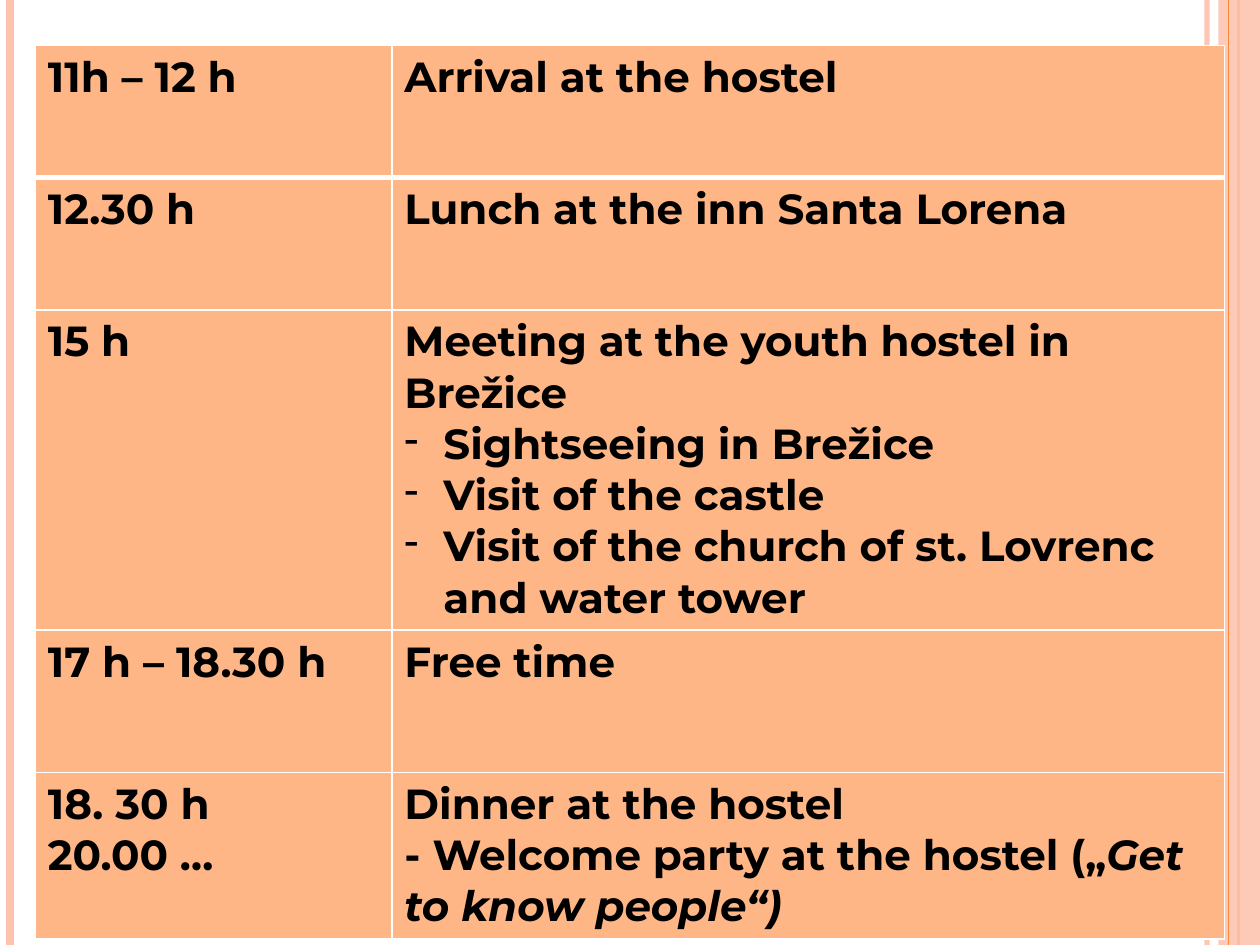
from lxml import etree
from pptx import Presentation
from pptx.dml.color import RGBColor
from pptx.enum.shapes import MSO_CONNECTOR, MSO_SHAPE
from pptx.oxml.ns import qn
from pptx.util import Inches, Pt

STRAIGHT = MSO_CONNECTOR.STRAIGHT
RECTANGLE = MSO_SHAPE.RECTANGLE

PINK = RGBColor(0xFE, 0xC3, 0xAE)
ORANGE = RGBColor(0xFE, 0x86, 0x37)
CELL_FILL = RGBColor(0xFE, 0xB6, 0x87)
BLACK = RGBColor(0, 0, 0)
WHITE = RGBColor(0xFF, 0xFF, 0xFF)

FONT = "Montserrat"
FONT_SIZE = 24
WIDTH, HEIGHT = 10, 7.5

# Each cell is a list of paragraphs: (bulleted, [(text, italic), ...])
def plain(text):
    return False, [(text, False)]


def bullet(text):
    return True, [(text, False)]


SCHEDULE = [
    ([plain("11h – 12 h")], [plain("Arrival at the hostel")]),
    ([plain("12.30 h")], [plain("Lunch at the inn Santa Lorena")]),
    ([plain("15 h")], [
        plain("Meeting at the youth hostel in Brežice"),
        bullet("Sightseeing in Brežice"),
        bullet("Visit of the castle"),
        bullet("Visit of the church of st. Lovrenc and water tower"),
    ]),
    ([plain("17 h – 18.30 h")], [plain("Free time")]),
    ([plain("18. 30 h"), plain("20.00 …")], [
        plain("Dinner at the hostel"),
        (False, [("- Welcome party at the hostel („", False),
                 ("Get to know people“)", True)]),
    ]),
]
TABLE_LEFT, TABLE_TOP = 0.28, 0.36
COLUMN_WIDTHS = [2.83, 6.61]
ROW_HEIGHTS = [1.05, 1.05, 2.1, 1.13, 1.13]
BULLET_INDENT = 0.31

# x position, colour, width in points, opacity in percent
LINES_BELOW_BAND = [
    (9.58, PINK, 3, 93),
    (0.08, PINK, 4.5, 100),
    (9.83, ORANGE, 1.5, 100),
]
LINES_ABOVE_BAND = [(9.75, ORANGE, 0.75, 100)]
BAND_LEFT, BAND_OPACITY = 9.67, 87


def set_opacity(element, percent):
    color = next(element.iter(qn("a:srgbClr")))
    etree.SubElement(color, qn("a:alpha"), val=str(percent * 1000))


def add_vertical_lines(slide, lines):
    for x, color, width, opacity in lines:
        line = slide.shapes.add_connector(
            STRAIGHT, Inches(x), 0, Inches(x), Inches(HEIGHT))
        line.line.color.rgb = color
        line.line.width = Pt(width)
        properties = line._element.spPr
        if opacity < 100:
            set_opacity(properties, opacity)
        etree.SubElement(properties, qn("a:effectLst"))


def add_band(slide):
    band = slide.shapes.add_shape(
        RECTANGLE, Inches(BAND_LEFT), 0,
        Inches(WIDTH - BAND_LEFT), Inches(HEIGHT))
    band.shadow.inherit = False
    band.fill.solid()
    band.fill.fore_color.rgb = PINK
    set_opacity(band._element.spPr, BAND_OPACITY)
    band.line.fill.background()


def set_borders(cell, widths):
    """Draw white borders; widths maps L, R, T and B to points."""
    properties = cell._tc.get_or_add_tcPr()
    for index, side in enumerate("LRTB"):
        border = etree.Element(qn(f"a:ln{side}"), w=str(Pt(widths[side])))
        fill = etree.SubElement(border, qn("a:solidFill"))
        etree.SubElement(fill, qn("a:srgbClr"), val=str(WHITE))
        properties.insert(index, border)


def set_bullet(paragraph):
    properties = paragraph._p.get_or_add_pPr()
    properties.set("marL", str(Inches(BULLET_INDENT)))
    properties.set("indent", str(-Inches(BULLET_INDENT)))
    etree.SubElement(properties, qn("a:buFontTx"))
    etree.SubElement(properties, qn("a:buChar"), char="-")


def fill_cell(cell, paragraphs):
    cell.fill.solid()
    cell.fill.fore_color.rgb = CELL_FILL
    text_frame = cell.text_frame
    text_frame.text = "\n".join(
        "".join(text for text, _ in runs) for _, runs in paragraphs)
    for paragraph, (bulleted, runs) in zip(text_frame.paragraphs, paragraphs):
        if bulleted:
            set_bullet(paragraph)
        paragraph.runs[0].text = runs[0][0]
        for _ in runs[1:]:
            paragraph.add_run()
        for run, (text, italic) in zip(paragraph.runs, runs):
            run.text = text
            run.font.name = FONT
            run.font.size = Pt(FONT_SIZE)
            run.font.bold = True
            run.font.italic = italic
            run.font.color.rgb = BLACK


def add_schedule(slide):
    frame = slide.shapes.add_table(
        len(SCHEDULE), len(COLUMN_WIDTHS),
        Inches(TABLE_LEFT), Inches(TABLE_TOP),
        Inches(sum(COLUMN_WIDTHS)), Inches(sum(ROW_HEIGHTS)))
    table = frame.table
    for column, width in zip(table.columns, COLUMN_WIDTHS):
        column.width = Inches(width)
    for row_index, (row, height) in enumerate(zip(table.rows, ROW_HEIGHTS)):
        row.height = Inches(height)
        widths = {"L": 1, "R": 1,
                  "T": 3 if row_index == 1 else 1,
                  "B": 3 if row_index == 0 else 1}
        for cell, paragraphs in zip(row.cells, SCHEDULE[row_index]):
            fill_cell(cell, paragraphs)
            set_borders(cell, widths)


def main():
    presentation = Presentation()
    presentation.slide_width = Inches(WIDTH)
    presentation.slide_height = Inches(HEIGHT)
    slide = presentation.slides.add_slide(presentation.slide_layouts[6])
    add_vertical_lines(slide, LINES_BELOW_BAND)
    add_band(slide)
    add_vertical_lines(slide, LINES_ABOVE_BAND)
    add_schedule(slide)
    presentation.save("out.pptx")


if __name__ == "__main__":
    main()
